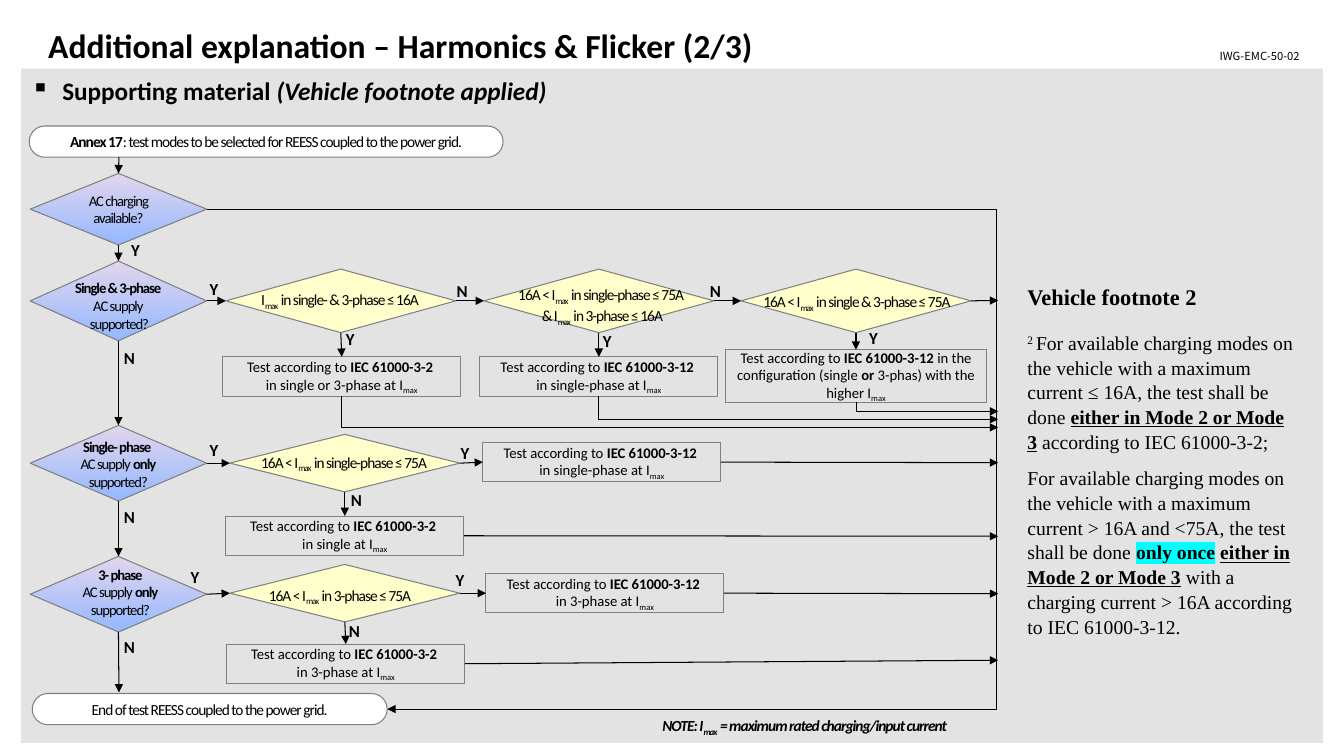
import pptx
import pptx.util
import pptx.dml.color
import pptx.enum.shapes
import pptx.enum.text
import pptx.oxml.ns
from lxml import etree

RGBColor = pptx.dml.color.RGBColor
BLACK = RGBColor(0x00, 0x00, 0x00)
WHITE = RGBColor(0xFF, 0xFF, 0xFF)
PANEL = RGBColor(0xE3, 0xE3, 0xE3)
OUTLINE = RGBColor(0x80, 0x80, 0x80)
YELLOW = RGBColor(0xFF, 0xFF, 0xCC)
LILAC = RGBColor(0xE2, 0xD6, 0xEC)
BLUE = RGBColor(0x94, 0xB8, 0xFF)
CYAN = RGBColor(0x00, 0xFF, 0xFF)

SHAPE = pptx.enum.shapes.MSO_SHAPE
CONNECTOR = pptx.enum.shapes.MSO_CONNECTOR
ALIGN = pptx.enum.text.PP_ALIGN
ANCHOR = pptx.enum.text.MSO_ANCHOR
qn = pptx.oxml.ns.qn
TOP, LEFT, BOTTOM, RIGHT = range(4)
BUS_X = 9.9
MAX = ("max", "-")
FLAGS = {"b": "bold", "i": "italic", "u": "underline"}
BASELINES = {"-": "-25000", "+": "30000"}


def cm(inches):
    return pptx.util.Cm(inches * 2.54)


def child(parent, tag, **attributes):
    return etree.SubElement(parent, qn(tag), attributes)


class Flowchart:
    def __init__(self, slide, font="Calibri"):
        self.s = slide
        self.font = font

    def fill_text(self, sp, paragraphs, size=10.5, font=None, align=ALIGN.CENTER, anchor=ANCHOR.TOP,
                  ins=(0, 0, 0, 0), wrap=True, tight=False, base=""):
        tf = sp.text_frame
        sides = ("margin_left", "margin_top", "margin_right", "margin_bottom")
        frame = {"word_wrap": wrap, "vertical_anchor": anchor, **dict(zip(sides, map(cm, ins)))}
        for name, value in frame.items():
            setattr(tf, name, value)
        for i, runs in enumerate(paragraphs):
            p = tf.paragraphs[0] if i == 0 else tf.add_paragraph()
            p.alignment = align
            for item in runs:
                text, marks = (item, "") if isinstance(item, str) else item
                r = p.add_run()
                r.text = text
                style = {"size": pptx.util.Pt(size), "name": font or self.font}
                style.update({FLAGS[m]: True for m in base + marks if m in FLAGS})
                for name, value in style.items():
                    setattr(r.font, name, value)
                r.font.color.rgb = BLACK
                rPr = r._r.get_or_add_rPr()
                if tight:
                    rPr.set("spc", "-70")
                for mark in marks:
                    if mark in BASELINES:
                        rPr.set("baseline", BASELINES[mark])
                if "h" in marks:
                    highlight = child(rPr, "a:highlight")
                    child(highlight, "a:srgbClr", val=str(CYAN))
                    rPr.find(qn("a:latin")).addprevious(highlight)
        return tf

    def text(self, at, paragraphs, home=None, **style):
        sp = (home or self.s.shapes).add_textbox(*map(cm, at))
        return self.fill_text(sp, paragraphs, **style)

    def shape(self, kind, at, fill=None, outline=True, home=None):
        sp = (home or self.s.shapes).add_shape(kind, *map(cm, at))
        sp.shadow.inherit = False
        if fill is None:
            sp.fill.background()
        else:
            sp.fill.solid()
            sp.fill.fore_color.rgb = fill
        if outline:
            sp.line.color.rgb = OUTLINE
            sp.line.width = pptx.util.Pt(0.75)
        else:
            sp.line.fill.background()
        return sp

    def terminal(self, at, runs):
        sp = self.shape(SHAPE.ROUNDED_RECTANGLE, at, WHITE)
        sp.adjustments[0] = 0.5
        self.fill_text(sp, [runs], 11, anchor=ANCHOR.MIDDLE, tight=True)
        return sp

    def stage(self, y, height, paragraphs, text_at=None):
        home = self.s.shapes.add_group_shape().shapes if text_at else None
        sp = self.shape(SHAPE.DIAMOND, (0.3, y, 1.75, height), BLUE, home=home)
        sp.fill.gradient()
        sp.fill.gradient_angle = 270
        for stop, color in zip(sp.fill.gradient_stops, (LILAC, BLUE)):
            stop.color.rgb = color
        if text_at:
            self.text(text_at, paragraphs, home, tight=True)
        else:
            self.fill_text(sp, paragraphs, anchor=ANCHOR.MIDDLE, tight=True)
        return sp

    def limit(self, at, text_at, paragraphs):
        sp = self.shape(SHAPE.DIAMOND, at, YELLOW)
        self.text(text_at, paragraphs, size=11, tight=True)
        return sp

    def test(self, x, y, standard, line):
        sp = self.shape(SHAPE.RECTANGLE, (x, y, 2.36, 0.39))
        rows = [["Test according to ", (f"IEC {standard} ", "b")], [line, MAX]]
        self.fill_text(sp, rows, anchor=ANCHOR.MIDDLE)
        return sp

    def point(self, end):
        sp, site = end
        if isinstance(sp, (int, float)):
            return cm(sp), cm(site)
        dx, dy = ((0.5, 0), (0, 0.5), (0.5, 1), (1, 0.5))[site]
        return int(sp.left + sp.width * dx), int(sp.top + sp.height * dy)

    def link(self, start, end, kind=CONNECTOR.STRAIGHT):
        c = self.s.shapes.add_connector(kind, *self.point(start), *self.point(end))
        for (sp, site), connect in ((start, c.begin_connect), (end, c.end_connect)):
            if not isinstance(sp, (int, float)):
                connect(sp, site)
        c.line.color.rgb = BLACK
        c.line.width = pptx.util.Pt(0.75)
        spPr = c._element.spPr
        child(spPr.find(qn("a:ln")), "a:tailEnd", type="triangle")
        child(spPr, "a:effectLst")
        return c

    def to_bus(self, sp, y):
        self.link((sp, RIGHT), (BUS_X, y))

    def drop_to_bus(self, sp, y):
        x1, y1 = self.point((sp, BOTTOM))
        c = self.link((sp, BOTTOM), (BUS_X, y), CONNECTOR.ELBOW)
        across, down = cm(BUS_X) - x1, cm(y) - y1
        turned = {"left": x1 + (across - down) // 2, "top": y1 + (down - across) // 2,
                  "width": down, "height": across}
        for name, value in turned.items():
            setattr(c, name, value)
        spPr = c._element.spPr
        for name, value in (("rot", "16200000"), ("flipH", "1")):
            spPr.find(qn("a:xfrm")).set(name, value)
        spPr.find(qn("a:prstGeom")).set("prst", "bentConnector2")

    def around(self, start, end, adjust):
        c = self.link(start, end, CONNECTOR.ELBOW)
        geometry = c._element.spPr.find(qn("a:prstGeom"))
        guides = geometry.find(qn("a:avLst"))
        if guides is None:
            guides = child(geometry, "a:avLst")
        child(guides, "a:gd", name="adj1", fmla=f"val {adjust}")


def main():
    prs = pptx.Presentation()
    prs.slide_width, prs.slide_height = cm(13.33), cm(7.5)
    f = Flowchart(prs.slides.add_slide(prs.slide_layouts[6]))
    pad = (0.1, 0.05, 0.1, 0.05)
    f.shape(SHAPE.RECTANGLE, (0.21, 0.68, 12.91, 6.69), PANEL, outline=False)
    f.text((0.38, 0.2, 10.65, 0.47), [["Additional explanation – Harmonics & Flicker (2/3)"]],
           size=24, align=ALIGN.LEFT, ins=pad, base="b")
    f.text((11.1, 0.44, 1.89, 0.24), [["IWG-EMC-50-02"]], size=8, font="Noto Sans CJK KR",
           align=ALIGN.RIGHT, ins=pad)
    tf = f.text((0.21, 0.7, 8.98, 0.4), [["Supporting material ", ("(Vehicle footnote applied)", "i")]],
                size=18, align=ALIGN.LEFT, ins=pad, base="b")
    pPr = tf.paragraphs[0]._p.get_or_add_pPr()
    for name, value in (("marL", cm(0.31)), ("indent", -cm(0.31))):
        pPr.set(name, str(value))
    child(pPr, "a:buChar", char="▪")

    f.terminal((0.29, 1.25, 4.7, 0.31),
               [("Annex 17", "b"), ": test modes to be selected for REESS coupled to the power grid."])
    finish = f.terminal((0.32, 6.88, 3.52, 0.31), ["End of test REESS coupled to the power grid."])
    only = ["AC supply ", ("only", "b")]
    charging = f.stage(1.72, 0.71, [["AC charging available?"]])
    both = f.stage(2.59, 0.79, [[("Single & 3-phase ", "b")], ["AC supply "], ["supported?"]], (0.24, 2.77, 1.89, 0.53))
    single = f.stage(4.22, 0.75, [[("Single- phase ", "b")], only, ["supported?"]], (0.23, 4.34, 1.89, 0.53))
    three = f.stage(5.52, 0.75, [[("3- phase", "b")], only, ["supported?"]], (0.25, 5.61, 1.89, 0.53))
    f.link((1.18, 1.56), (charging, TOP))
    for upper, lower in ((charging, both), (both, single), (single, three)):
        f.link((upper, BOTTOM), (lower, TOP))
    f.link((three, BOTTOM), (1.18, 6.87))
    f.around((charging, RIGHT), (finish, RIGHT), 437500)

    limits = [
        f.limit((2.24, 2.67, 2.28, 0.63), (2.44, 2.88, 1.89, 0.19), [["I", MAX, " in single- & 3-phase ≤ 16A "]]),
        f.limit((4.8, 2.67, 2.28, 0.63), (4.99, 2.83, 1.97, 0.37),
                [["16A < I", MAX, " in single-phase ≤ 75A "], ["& I", MAX, " in 3-phase ≤ 16A"]]),
        f.limit((7.35, 2.67, 2.28, 0.63), (7.38, 2.9, 2.24, 0.19), [["16A < I", MAX, " in single & 3-phase ≤ 75A"]]),
    ]
    higher = f.shape(SHAPE.RECTANGLE, (7.2, 3.47, 2.58, 0.52))
    f.fill_text(higher, [["Test according to ", ("IEC 61000-3-12 ", "b"), "in the configuration (single ",
                          ("or", "b"), " 3-phas) with the higher I", MAX]], anchor=ANCHOR.MIDDLE)
    tests = [f.test(2.21, 3.54, "61000-3-2", "in single or 3-phase at I"),
             f.test(4.76, 3.54, "61000-3-12", "in single-phase at I"), higher]
    for before, limit, test, y in zip([both, *limits], limits, tests, (4.24, 4.16, 4.08)):
        f.link((before, RIGHT), (limit, LEFT))
        f.link((limit, BOTTOM), (test, TOP))
        f.drop_to_bus(test, y)
    f.to_bus(limits[-1], 2.98)

    branches = (
        (single, 4.31, (2.44, 4.49, 1.97, 0.19), "single-phase", (4.79, 4.39), (2.24, 5.12), "single", 4.59, 5.32),
        (three, 5.6, (2.52, 5.81, 1.73, 0.19), "3-phase", (4.82, 5.69), (2.25, 6.39), "3-phase", 5.89, 6.55))
    for stage, y, text_at, phase, high_at, low_at, low_phase, high_y, low_y in branches:
        limit = f.limit((2.28, y, 2.28, 0.57), text_at, [["16A < I", MAX, f" in {phase} ≤ 75A "]])
        high = f.test(*high_at, "61000-3-12", f"in {phase} at I")
        low = f.test(*low_at, "61000-3-2", f"in {low_phase} at I")
        f.link((stage, RIGHT), (limit, LEFT))
        f.link((limit, RIGHT), (high, LEFT))
        f.link((limit, BOTTOM), (low, TOP))
        f.to_bus(high, high_y)
        f.to_bus(low, low_y)

    answers = {
        "Y": ((1.3, 2.38), (2.08, 2.77), (3.43, 3.26), (5.98, 3.28), (8.62, 3.25),
              (2.08, 4.36), (4.57, 4.39), (1.89, 5.62), (4.52, 5.65)),
        "N": ((4.53, 2.79), (7.04, 2.79), (1.23, 3.45), (3.48, 4.86), (1.23, 5.03), (3.46, 6.16), (1.23, 6.32))}
    for answer, places in answers.items():
        for place in places:
            f.text((*place, 0.1, 0.2), [[answer]], size=12, align=ALIGN.LEFT, wrap=False, base="b")

    modes = "For available charging modes on the vehicle with a maximum current "
    tf = f.text((9.99, 2.79, 2.99, 3.54), [
        [("Vehicle footnote 2", "b")],
        [("2 ", "+"), modes + "≤ 16A, the test shall be done ", ("either in Mode 2 or Mode 3", "bu"),
         " according to IEC 61000-3-2;"],
        [modes + "> 16A and <75A, the test shall be done ", ("only once", "bh"), " ",
         ("either in Mode 2 or Mode 3", "bu"), " with a charging current > 16A according to IEC 61000-3-12."]],
        size=14, font="Times New Roman", align=ALIGN.LEFT, anchor=ANCHOR.MIDDLE, ins=(0.2, 0.05, 0.1, 0.05))
    tf.paragraphs[0].runs[0].font.size = pptx.util.Pt(16)
    for p, gap in zip(tf.paragraphs, (0, 14.5, 8.5)):
        p.line_spacing = 1.05
        p.space_before = pptx.util.Pt(gap)
    f.text((6.47, 7.06, 4.11, 0.29), [["NOTE: I", MAX, " = maximum rated charging/input current"]],
           size=11, align=ALIGN.LEFT, ins=pad, tight=True, base="bi")
    prs.save("out.pptx")


if __name__ == "__main__":
    main()
